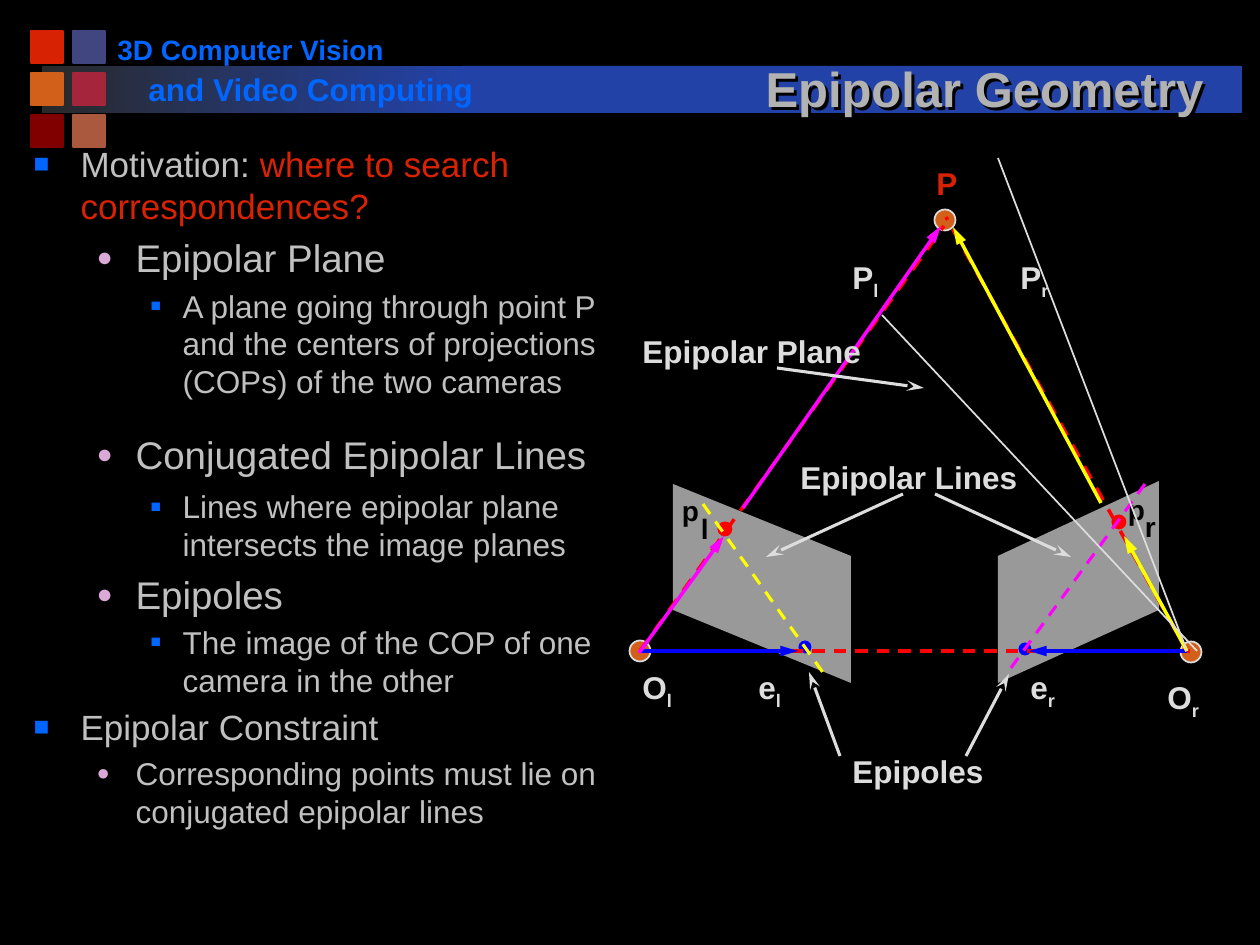
from lxml import etree
from pptx import Presentation
from pptx import util as u
from pptx.dml.color import RGBColor
from pptx.enum import dml, shapes, text
from pptx.oxml import parse_xml
from pptx.oxml.ns import qn

PX = u.Inches(1) / 126
FONT = "Arial"
NS = 'xmlns:a="http://schemas.openxmlformats.org/drawingml/2006/main"'

BLACK = RGBColor(0, 0, 0)
PALE = RGBColor(0xDD, 0xDD, 0xDD)
SILVER = RGBColor(0xC0, 0xC0, 0xC0)
GREY = RGBColor(0x99, 0x99, 0x99)
TITLE = RGBColor(0xB2, 0xB2, 0xB2)
DARK = RGBColor(0x29, 0x29, 0x29)
NAVY = RGBColor(0x22, 0x42, 0xA8)
AZURE = RGBColor(0x00, 0x66, 0xFF)
LILAC = RGBColor(0xDB, 0xA9, 0xD7)
VERM = RGBColor(0xD8, 0x22, 0x04)
AMBER = RGBColor(0xD2, 0x60, 0x1A)
RED = RGBColor(0xFF, 0, 0)
BLUE = RGBColor(0, 0, 0xFF)
PINK = RGBColor(0xFF, 0, 0xFF)
YELLOW = RGBColor(0xFF, 0xFF, 0)

# Rows of the corner tiles
TILES = [
    (VERM, RGBColor(0x42, 0x46, 0x80)),
    (AMBER, RGBColor(0xA5, 0x25, 0x3D)),
    (RGBColor(0x80, 0, 0), RGBColor(0xAA, 0x58, 0x3E)),
]
# Text, left, top, width, size
HEADS = [
    ("3D Computer Vision", 105, 26, 292, 16),
    ("and Video Computing", 136, 64, 357, 18),
]
# Level, size, extra space before, extra space after, runs
BODY = [
    (0, 20, 0, 0, [("Motivation: ", SILVER), ("where to search correspondences?", VERM)]),
    (1, 22, 0, 0, [("Epipolar Plane", SILVER)]),
    (2, 18, 0, 0, [("A plane going through point P and the centers of projections "
                    "(COPs) of the two cameras", SILVER)]),
    (1, 22, 13.6, 2, [("Conjugated Epipolar Lines", SILVER)]),
    (2, 18, 0, 0, [("Lines where epipolar plane intersects the image planes", SILVER)]),
    (1, 22, 0, 0, [("Epipoles", SILVER)]),
    (2, 18, 0, 0, [("The image of the COP of one camera in the other", SILVER)]),
    (0, 20, 0, 0, [("Epipolar Constraint", SILVER)]),
    (1, 18, 0, 0, [("Corresponding points must lie on conjugated epipolar lines", SILVER)]),
]
# Left margin, hanging indent, bullet, its colour, its size in percent
LEVELS = [(47, 47, "■", AZURE, 75), (102, 39, "●", LILAC, 70), (149, 32, "■", AZURE, 55)]

PLANES = [
    [(673, 484), (851, 556), (851, 683), (673, 610)],
    [(1159, 481), (998, 556), (998, 683), (1159, 610)],
]
# Centre, diameter, fill, outline
DOTS = [
    ((1119, 522), 15, RED, None), ((725, 529), 15, RED, None),
    ((640, 651), 21, AMBER, PALE), ((1191, 652), 21, AMBER, PALE),
    ((945, 220), 21, AMBER, PALE),
    ((805, 647), 13, BLUE, None), ((1025, 649), 13, BLUE, None),
]
# Colour, weight, dashed, arrowhead, list of (from, to)
LINES = [
    (RED, 1.75, True, None, [((640, 651), (1197, 651))]),
    (BLUE, 2, False, "triangle", [((640, 651), (798, 651)), ((1187, 651), (1029, 651))]),
    (RED, 2, True, None, [((640, 651), (944, 226)), ((1187, 651), (946, 217))]),
    (PINK, 2, False, "triangle", [((639, 653), (724, 536)), ((743, 508), (941, 226))]),
    (YELLOW, 2, False, "triangle", [((1187, 651), (1124, 536)), ((1101, 503), (953, 227))]),
    (YELLOW, 1.75, True, None, [((703, 504), (824, 674))]),
    (PINK, 1.75, True, None, [((1145, 484), (1008, 672))]),
    (PALE, 1.75, False, "stealth", [
        ((777, 368), (924, 388)), ((903, 494), (766, 557)), ((935, 494), (1071, 557)),
        ((966, 756), (1009, 674)), ((840, 756), (809, 672))]),
    (PALE, 1, False, None, [((882, 315), (1197, 651)), ((998, 158), (1187, 651))]),
]
# Text, subscript, left, top, width
LABELS = [
    ("O", "l", 630, 662, 73), ("O", "r", 1155, 672, 73),
    ("e", "l", 746, 662, 73), ("e", "r", 1018, 662, 73),
    ("P", "l", 840, 252, 73), ("P", "r", 1008, 252, 73),
    ("Epipolar Plane", "", 630, 326, 262),
    ("Epipolar Lines", "", 788, 452, 262),
    ("Epipoles", "", 840, 746, 189),
]
MARKS = [("p", 682, 494), ("l", 701, 512), ("p", 1128, 493), ("r", 1145, 510)]


def emu(*vals):
    return [round(v * PX) for v in vals]


def paint(shape, fill, edge=None):
    shape.shadow.inherit = False
    shape.fill.solid()
    shape.fill.fore_color.rgb = fill
    if edge is None:
        shape.line.fill.background()
    else:
        shape.line.color.rgb = edge
        shape.line.width = u.Pt(1)


def add_run(para, words, size, color, bold=True):
    run = para.add_run()
    run.text = words
    for key, val in dict(name=FONT, size=u.Pt(size), bold=bold).items():
        setattr(run.font, key, val)
    run.font.color.rgb = color
    return run


def add_label(words, box, size, color, sub="", wrap=True, inset=True):
    frame = slide.shapes.add_textbox(*emu(*box)).text_frame
    frame.word_wrap = wrap
    if not inset:
        for side in ("left", "top", "right", "bottom"):
            setattr(frame, "margin_" + side, 0)
    add_run(frame.paragraphs[0], words, size, color)
    if sub:
        low = add_run(frame.paragraphs[0], sub, size, color)
        low.font._element.set("baseline", "-25000")


def add_line(start, end, color, weight, dashed, head):
    line = slide.shapes.add_connector(shapes.MSO_CONNECTOR.STRAIGHT, *emu(*start, *end))
    line.line.color.rgb = color
    line.line.width = u.Pt(weight)
    if dashed:
        line.line.dash_style = dml.MSO_LINE.DASH
    if head:
        etree.SubElement(line.line._get_or_add_ln(), qn("a:tailEnd"), type=head, len="lg")
    etree.SubElement(line._element.spPr, qn("a:effectLst"))


deck = Presentation()
deck.slide_width, deck.slide_height = emu(1260, 945)
slide = deck.slides.add_slide(deck.slide_layouts[1])
slide.background.fill.solid()
slide.background.fill.fore_color.rgb = BLACK
title, body = slide.placeholders

# Title bar, corner tiles and course name
RECT, OVAL = shapes.MSO_SHAPE.RECTANGLE, shapes.MSO_SHAPE.OVAL
for left, width in ((42, 420), (462, 780)):
    bar = slide.shapes.add_shape(RECT, *emu(left, 66, width, 47))
    paint(bar, NAVY)
    if left == 42:
        bar.fill.gradient()
        bar.fill.gradient_angle = 0
        for stop, color, pos in zip(bar.fill.gradient_stops, (DARK, NAVY), (0, 1)):
            stop.color.rgb = color
            stop.position = pos
for row, pair in enumerate(TILES):
    for col, color in enumerate(pair):
        tile = slide.shapes.add_shape(RECT, *emu(31 + 42 * col, 31 + 42 * row, 32, 32))
        paint(tile, color, color)
for words, left, top, width, size in HEADS:
    add_label(words, (left, top, width, 48), size, AZURE, wrap=size == 18)

# Title and body sit above the bar
for holder, box in ((title, (714, 40, 541, 84)), (body, (21, 136, 589, 766))):
    holder.left, holder.top, holder.width, holder.height = emu(*box)
    holder.text_frame.auto_size = text.MSO_AUTO_SIZE.NONE
    slide.shapes._spTree.append(holder._element)
title.text_frame.vertical_anchor = text.MSO_ANCHOR.BOTTOM
para = title.text_frame.paragraphs[0]
para.alignment = text.PP_ALIGN.CENTER
add_run(para, "Epipolar Geometry", 28, TITLE)
title._element.spPr.append(parse_xml(
    f'<a:effectLst {NS}><a:outerShdw dist="30000" dir="2700000">'
    '<a:srgbClr val="000000"/></a:outerShdw></a:effectLst>'))

# Bulleted text
for i, (level, size, before, after, runs) in enumerate(BODY):
    para = body.text_frame.add_paragraph() if i else body.text_frame.paragraphs[0]
    form = dict(level=level, space_after=u.Pt(after),
                space_before=u.Pt(round(0.2 * size + before, 1) if i else 0))
    for key, val in form.items():
        setattr(para, key, val)
    margin, hang, char, color, scale = LEVELS[level]
    props = para._p.get_or_add_pPr()
    props.set("marL", str(emu(margin)[0]))
    props.set("indent", str(-emu(hang)[0]))
    for xml in (f'<a:buClr {NS}><a:srgbClr val="{color}"/></a:buClr>',
                f'<a:buSzPct {NS} val="{scale * 1000}"/>',
                f'<a:buFont {NS} typeface="{FONT}"/>',
                f'<a:buChar {NS} char="{char}"/>'):
        props.append(parse_xml(xml))
    for words, tint in runs:
        add_run(para, words, size, tint, bold=False)

# Image planes, points and rays
for first, *rest in PLANES:
    pen = slide.shapes.build_freeform(*first, scale=PX)
    pen.add_line_segments(rest, close=True)
    paint(pen.convert_to_shape(), GREY)
for words, left, top in MARKS:
    add_label(words, (left, top, 25, 38), 16, BLACK, wrap=False, inset=False)
for (x, y), size, fill, edge in DOTS:
    dot = slide.shapes.add_shape(OVAL, *emu(x - size / 2, y - size / 2, size, size))
    paint(dot, fill, edge)
for color, weight, dashed, head, ends in LINES:
    for start, end in ends:
        add_line(start, end, color, weight, dashed, head)

# Labels
add_label("P", (924, 158, 47, 50), 18, VERM, wrap=False)
for words, sub, left, top, width in LABELS:
    add_label(words, (left, top, width, 50), 18, PALE, sub)

deck.save("out.pptx")
